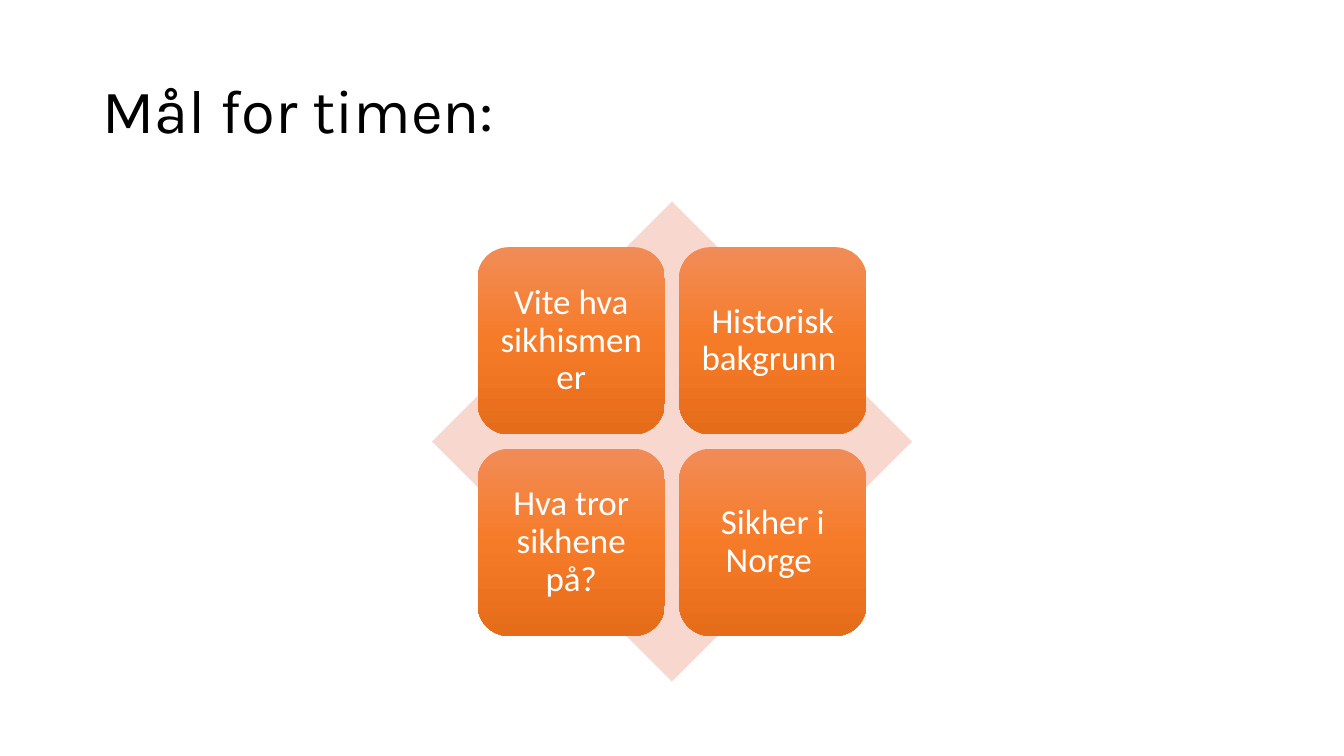
from copy import deepcopy

from pptx import Presentation
from pptx import util as u
from pptx.dml.color import RGBColor
from pptx.enum import shapes, text

Pt = u.Pt


def rgb(value):
    return RGBColor.from_string(value)


def write(sp, words, align, **font):
    tf = sp.text_frame
    tf.word_wrap = True
    tf.auto_size = text.MSO_AUTO_SIZE.NONE
    tf.vertical_anchor = text.MSO_ANCHOR.MIDDLE
    p = tf.paragraphs[0]
    p.alignment = align
    p.line_spacing = 0.9
    r = p.add_run()
    r.text = words
    r.font.color.rgb = rgb(font.pop("color"))
    for name, value in font.items():
        setattr(r.font, name, value)


prs = Presentation()
prs.slide_width, prs.slide_height = Pt(960), Pt(540)
s = prs.slides.add_slide(prs.slide_layouts[5])

# Title
title = s.shapes.title
title.left, title.top, title.width, title.height = Pt(66.2), Pt(28.8), Pt(828), Pt(104.4)
write(title, "Mål for timen:", text.PP_ALIGN.LEFT, name="Karla", size=Pt(44), color="000000")

# Diamond behind the goals
CX, CY, DIAMOND = 480, 315.4, 342.8
matrix = s.shapes.add_group_shape()
diamond = matrix.shapes.add_shape(
    shapes.MSO_SHAPE.DIAMOND,
    Pt(CX - DIAMOND / 2), Pt(CY - DIAMOND / 2), Pt(DIAMOND), Pt(DIAMOND))
diamond.shadow.inherit = False
diamond.fill.solid()
diamond.fill.fore_color.rgb = rgb("F8D7CE")
diamond.line.fill.background()

# Goals in a two by two grid
TILE, PITCH = 133.7, 144
GRADIENT = [(0, "F18C57"), (0.5, "F67B28"), (1, "E56C19")]
goals = ["Vite hva sikhismen er", "Historisk bakgrunn ",
         "Hva tror sikhene på?", "Sikher i Norge "]
for i, goal in enumerate(goals):
    row, col = divmod(i, 2)
    sp = matrix.shapes.add_shape(
        shapes.MSO_SHAPE.ROUNDED_RECTANGLE,
        Pt(CX + (col - 0.5) * PITCH - TILE / 2),
        Pt(CY + (row - 0.5) * PITCH - TILE / 2), Pt(TILE), Pt(TILE))
    sp.shadow.inherit = False
    sp.line.fill.background()

    # Third gradient stop, then colours from top to bottom
    sp.fill.gradient()
    sp.fill.gradient_angle = 270
    first = sp._element.spPr.xpath(".//a:gs")[0]
    first.addnext(deepcopy(first))
    for stop, (position, color) in zip(sp.fill.gradient_stops, GRADIENT):
        stop.position = position
        stop.color.rgb = rgb(color)

    for side in ("left", "top", "right", "bottom"):
        setattr(sp.text_frame, f"margin_{side}", Pt(7.2))
    write(sp, goal, text.PP_ALIGN.CENTER, name="Calibri", size=Pt(25), color="FFFFFF")

prs.save("out.pptx")
